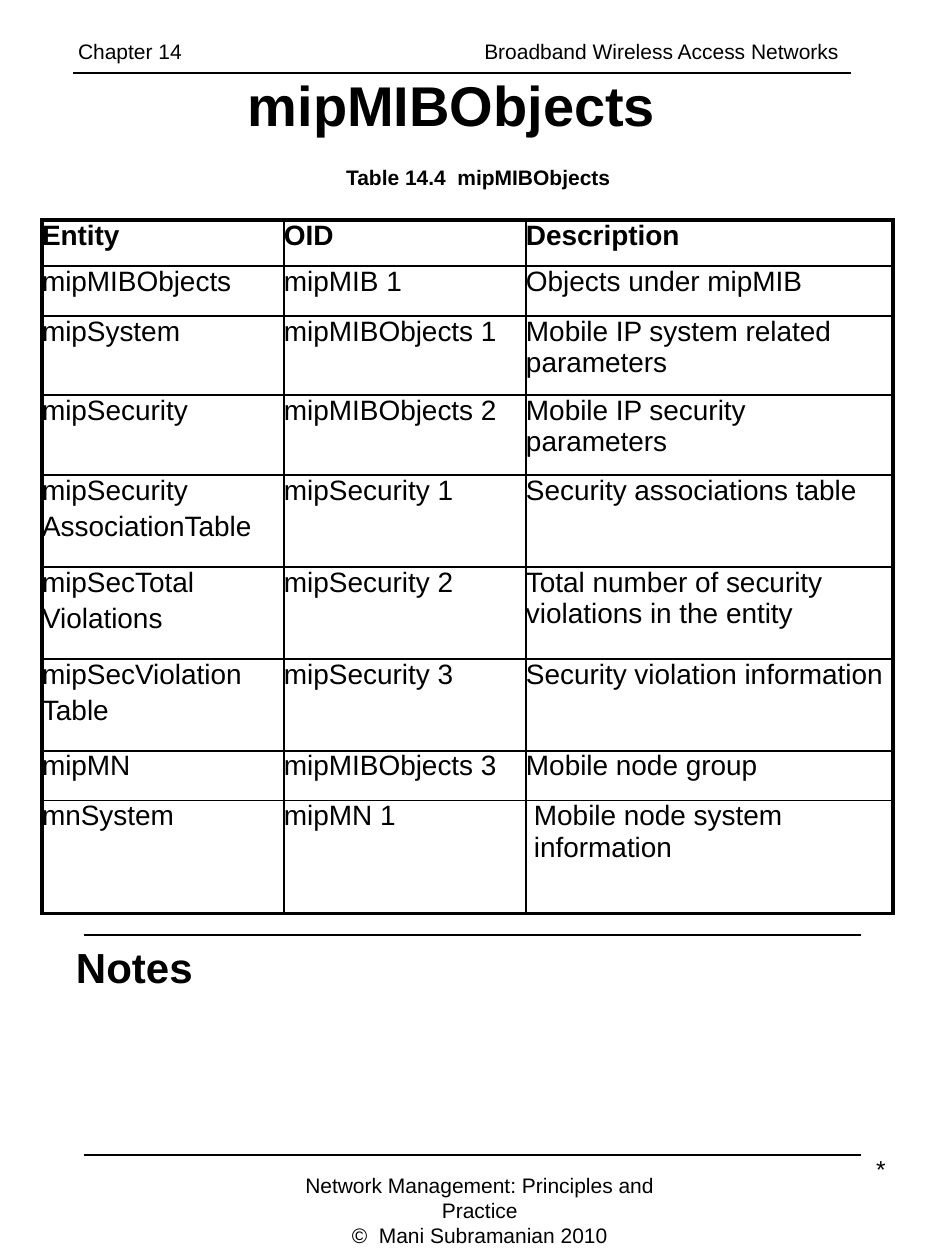
import lxml.etree
import pptx
import pptx.dml.color
import pptx.enum.shapes
import pptx.enum.text
import pptx.oxml.ns
import pptx.util

PIXEL = 914400 / 126
BLACK = pptx.dml.color.RGBColor(0, 0, 0)
FONT = "Arial"
THIN, THICK = 1, 2.25
LEFT = pptx.enum.text.PP_ALIGN.LEFT
CENTER = pptx.enum.text.PP_ALIGN.CENTER
RIGHT = pptx.enum.text.PP_ALIGN.RIGHT
TOP = pptx.enum.text.MSO_ANCHOR.TOP
MIDDLE = pptx.enum.text.MSO_ANCHOR.MIDDLE

COLUMN_WIDTHS = [242, 242, 367]
ROW_HEIGHTS = [46, 50, 79, 80, 92, 92, 92, 50, 113]
ENTITIES = [
    ("Entity", "OID", "Description"),
    ("mipMIBObjects", "mipMIB 1", "Objects under mipMIB"),
    ("mipSystem", "mipMIBObjects 1", "Mobile IP system related parameters"),
    ("mipSecurity", "mipMIBObjects 2", "Mobile IP security parameters"),
    ("mipSecurity\nAssociationTable", "mipSecurity 1", "Security associations table"),
    ("mipSecTotal\nViolations", "mipSecurity 2",
     "Total number of security violations in the entity"),
    ("mipSecViolation\nTable", "mipSecurity 3", "Security violation information"),
    ("mipMN", "mipMIBObjects 3", "Mobile node group"),
    ("mnSystem", "mipMN 1", "Mobile node system information"),
]


def px(length):
    return pptx.util.Emu(round(length * PIXEL))


def add_element(parent, tag, **attributes):
    return lxml.etree.SubElement(parent, pptx.oxml.ns.qn(tag), attributes)


class SlideBuilder:
    def __init__(self, slide):
        self.slide = slide

    def fill_text(self, text_frame, text, size, bold=False, align=LEFT, space_before=0):
        text_frame.text = text
        for index, paragraph in enumerate(text_frame.paragraphs):
            paragraph.alignment = align
            if index:
                paragraph.space_before = pptx.util.Pt(space_before)
            for run in paragraph.runs:
                run.font.name = FONT
                run.font.size = pptx.util.Pt(size)
                run.font.bold = bold
                run.font.color.rgb = BLACK

    def text(self, left, top, width, height, text, size, bold=False,
             align=LEFT, anchor=TOP, inset=13):
        box = self.slide.shapes.add_textbox(px(left), px(top), px(width), px(height))
        text_frame = box.text_frame
        text_frame.word_wrap = True
        text_frame.vertical_anchor = anchor
        text_frame.margin_left = px(inset)
        self.fill_text(text_frame, text, size, bold, align)
        return box

    def header(self, left, top, width, height, text, size, inset, tab_position):
        box = self.text(left, top, width, height, text, size, inset=inset)
        properties = box.text_frame.paragraphs[0]._p.get_or_add_pPr()
        tabs = add_element(properties, "a:tabLst")
        add_element(tabs, "a:tab", pos=str(px(tab_position)), algn="r")

    def rule(self, left, right, y):
        line = self.slide.shapes.add_connector(
            pptx.enum.shapes.MSO_CONNECTOR.STRAIGHT, px(left), px(y), px(right), px(y))
        line.line.color.rgb = BLACK
        line.line.width = pptx.util.Pt(THIN)
        add_element(line._element.spPr, "a:effectLst")

    def border(self, cell, side, width):
        properties = cell._tc.get_or_add_tcPr()
        line = add_element(properties, f"a:ln{side}", w=str(pptx.util.Pt(width)))
        fill = add_element(line, "a:solidFill")
        add_element(fill, "a:srgbClr", val=str(BLACK))

    def table(self, left, top, widths, heights, rows, size):
        frame = self.slide.shapes.add_table(
            len(heights), len(widths), px(left), px(top),
            px(sum(widths)), px(sum(heights)))
        table = frame.table
        table.first_row = False
        table.horz_banding = False
        for column, width in zip(table.columns, widths):
            column.width = px(width)
        last_row, last_column = len(heights) - 1, len(widths) - 1
        for row_index, row in enumerate(rows):
            table.rows[row_index].height = px(heights[row_index])
            for column_index, text in enumerate(row):
                cell = table.cell(row_index, column_index)
                cell.margin_left = cell.margin_right = 0
                cell.margin_top = cell.margin_bottom = 0
                self.fill_text(cell.text_frame, text, size, row_index == 0,
                               space_before=3.2)
                outer_sides = {
                    "L": column_index == 0,
                    "R": column_index == last_column,
                    "T": row_index == 0,
                    "B": row_index == last_row,
                }
                for side, is_outer in outer_sides.items():
                    self.border(cell, side, THICK if is_outer else THIN)
                cell.fill.background()
        return table


def main():
    presentation = pptx.Presentation()
    presentation.slide_width = px(945)
    presentation.slide_height = px(1260)
    builder = SlideBuilder(presentation.slides.add_slide(presentation.slide_layouts[6]))

    builder.rule(84, 861, 935)
    builder.text(0, 935, 210, 63, "Notes", 24, bold=True, inset=76)
    builder.text(63, 73, 777, 63, "mipMIBObjects", 32, bold=True,
                 align=CENTER, anchor=MIDDLE)
    table = builder.table(42, 220, COLUMN_WIDTHS, ROW_HEIGHTS, ENTITIES, 16)
    table.cell(8, 2).margin_left = px(8)
    builder.rule(73, 851, 73)
    builder.header(42, 32, 813, 38, "Chapter 14\tBroadband Wireless Access Networks",
                   12, inset=36, tab_position=761)
    builder.rule(84, 861, 1155)
    builder.text(252, 1166, 455, 63,
                 "Network Management: Principles and Practice\n©  Mani Subramanian 2010",
                 12, align=CENTER)
    builder.text(678, 1148, 220, 87, "*", 14, align=RIGHT)
    builder.text(53, 158, 850, 38, "Table 14.4  mipMIBObjects", 12, bold=True,
                 align=CENTER)
    presentation.save("out.pptx")


if __name__ == "__main__":
    main()
